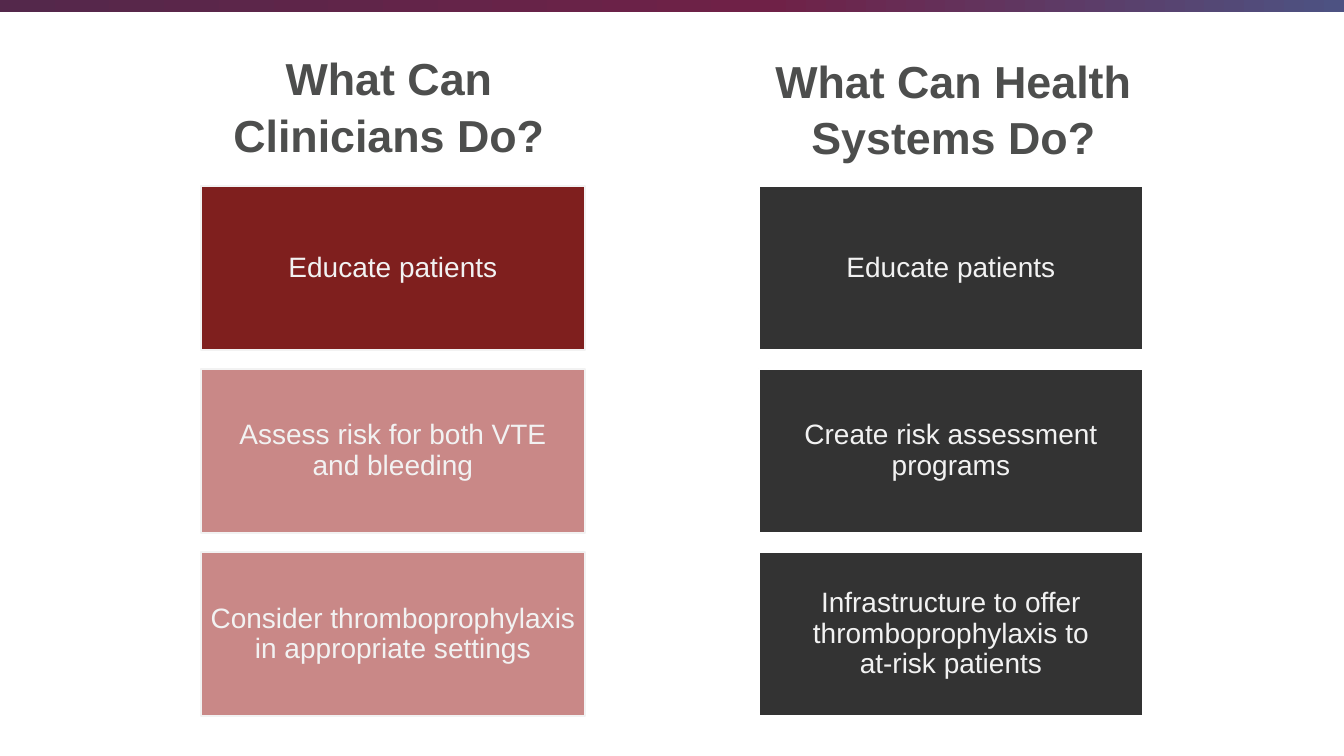
from copy import deepcopy

from pptx import Presentation
from pptx.dml.color import RGBColor
from pptx.enum.shapes import MSO_SHAPE
from pptx.enum.text import MSO_ANCHOR, PP_ALIGN
from pptx.util import Pt

RECT = MSO_SHAPE.RECTANGLE
MIDDLE, BOTTOM = MSO_ANCHOR.MIDDLE, MSO_ANCHOR.BOTTOM
CENTER = PP_ALIGN.CENTER

WHITE = RGBColor(0xFF, 0xFF, 0xFF)
PALE = RGBColor(0xF2, 0xF2, 0xF2)
GRAY = RGBColor(0x4D, 0x4E, 0x4D)
DARK = RGBColor(0x33, 0x33, 0x33)
RED = RGBColor(0x7F, 0x1F, 0x1E)
PINK = RGBColor(0xC9, 0x88, 0x87)
BAR = [
    (0, RGBColor(0x54, 0x28, 0x4B)),
    (0.57, RGBColor(0x6F, 0x21, 0x47)),
    (1, RGBColor(0x4D, 0x52, 0x82)),
]

# A vertical tab in the text is a line break.
HEADS = ["What Can\vClinicians Do?", "What Can Health Systems Do?"]
# Each column: left edge, line colour, cards as (text, fill)
COLUMNS = [
    (201, PALE, [
        ("Educate patients", RED),
        ("Assess risk for both VTE\vand bleeding", PINK),
        ("Consider thromboprophylaxis in appropriate settings", PINK),
    ]),
    (759, WHITE, [
        ("Educate patients", DARK),
        ("Create risk assessment programs", DARK),
        ("Infrastructure to offer thromboprophylaxis to\vat-risk patients", DARK),
    ]),
]
WIDE, HIGH = 1344, 756
TOP, CARD_W, CARD_H, STEP = 186, 384, 164, 183
PX = 914400 * 7.5 / HIGH


def px(*sizes):
    return [round(size * PX) for size in sizes]


def write(shape, text, size, color, anchor, spacing, bold=False):
    frame = shape.text_frame
    frame.word_wrap = True
    frame.vertical_anchor = anchor
    frame.text = text
    para = frame.paragraphs[0]
    para.alignment = CENTER
    para.line_spacing = spacing
    font = para.font
    font.name, font.size, font.bold = "Arial", Pt(size), bold
    font.color.rgb = color
    return frame


def inset(frame, left, top, right, bottom):
    frame.margin_left, frame.margin_top, frame.margin_right, frame.margin_bottom = px(
        left, top, right, bottom)


def add_bar(shapes):
    bar = shapes.add_shape(RECT, *px(0, 0, WIDE, 12))
    bar.shadow.inherit = False
    bar.line.fill.background()
    bar.fill.gradient()
    bar.fill.gradient_angle = 0
    first = bar._element.xpath(".//a:gs")[0]
    first.addnext(deepcopy(first))
    for stop, (place, color) in zip(bar.fill.gradient_stops, BAR):
        stop.position = place
        stop.color.rgb = color


def add_card(shapes, left, top, text, fill, line):
    card = shapes.add_shape(RECT, *px(left, top, CARD_W, CARD_H))
    card.shadow.inherit = False
    card.fill.solid()
    card.fill.fore_color.rgb = fill
    card.line.color.rgb = line
    card.line.width = Pt(1)
    inset(write(card, text, 20, PALE, MIDDLE, 0.9), 8, 8, 8, 8)


def main():
    deck = Presentation()
    deck.slide_width, deck.slide_height = px(WIDE, HIGH)
    slide = deck.slides.add_slide(deck.slide_layouts[5])
    shapes = slide.shapes
    add_bar(shapes)

    title = shapes.title
    title.left, title.top, title.width, title.height = px(712, 44, 483, 126)
    write(title, HEADS[1], 32, GRAY, MIDDLE, 1.05, True)

    for left, line, cards in COLUMNS:
        for row, (text, fill) in enumerate(cards):
            add_card(shapes, left, TOP + row * STEP, text, fill, line)

    head = shapes.add_textbox(*px(165, 35, 458, 126))
    inset(write(head, HEADS[0], 32, GRAY, BOTTOM, 1.05, True), 0, 0, 10, 0)
    deck.save("out.pptx")


if __name__ == "__main__":
    main()
